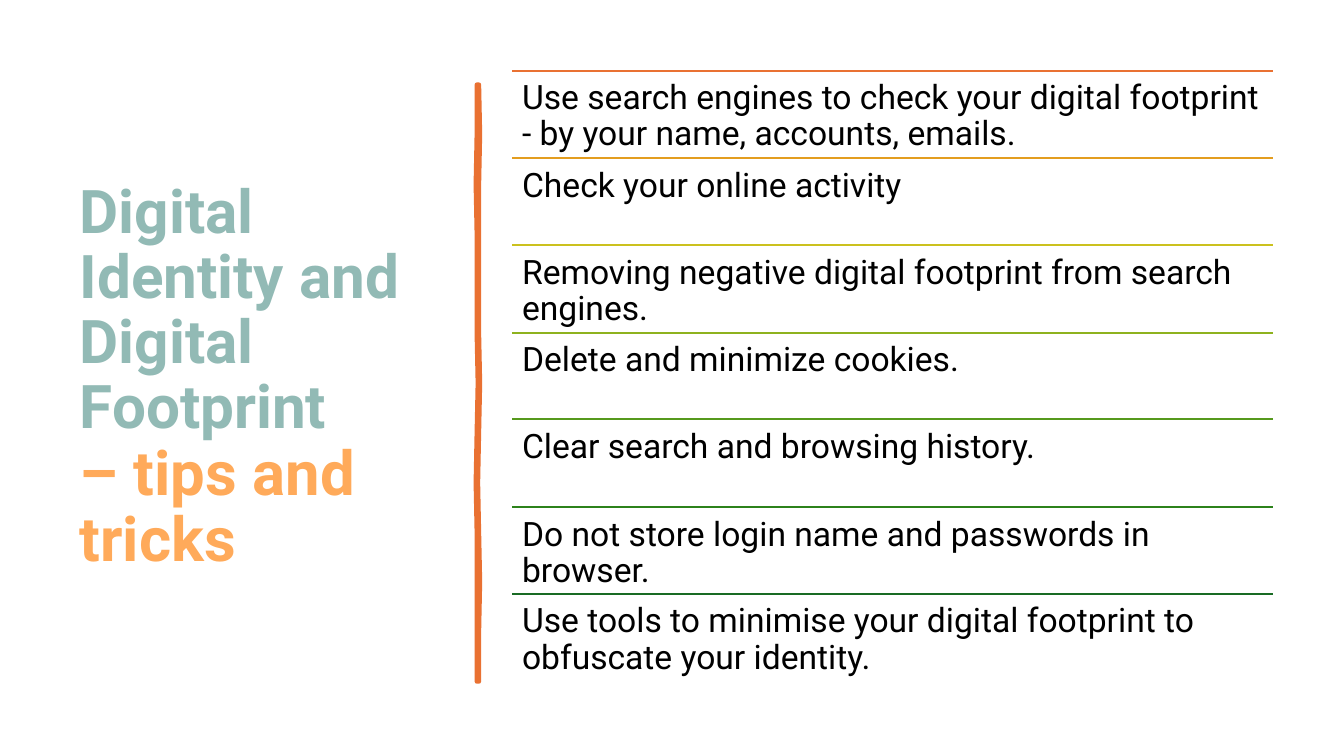
from dataclasses import dataclass

from lxml.etree import SubElement
from pptx import Presentation
from pptx.dml.color import RGBColor as Color
from pptx.enum.shapes import MSO_CONNECTOR as Connector
from pptx.enum.text import MSO_ANCHOR as Anchor, MSO_AUTO_SIZE as AutoSize, PP_ALIGN as Align
from pptx.oxml.ns import qn
from pptx.util import Pt

PX = 9144


@dataclass(frozen=True)
class Theme:
    font: str = "Roboto"
    teal: str = "92BAB5"
    apricot: str = "FFAA5A"
    orange: str = "E97132"
    text: str = "000000"
    title_size: int = 43
    subtitle_size: int = 44
    tip_size: int = 24
    rule_width: float = 1.5
    brush_width: float = 3.25
    line_spacing: float = 0.9


THEME = Theme()

TITLE = "Digital Identity and Digital Footprint \v– tips and tricks"

TIPS = [
    ("Use search engines to check your digital footprint - by your name, accounts, emails.", "E97132"),
    ("Check your online activity", "E39D1F"),
    ("Removing negative digital footprint from search engines.", "CBC11E"),
    ("Delete and minimize cookies.", "8EB21E"),
    ("Clear search and browsing history.", "56991D"),
    ("Do not store login name and passwords in browser.", "2C821B"),
    ("Use tools to minimise your digital footprint to obfuscate your identity.", "196B24"),
]

TIP_LEFT, TIP_TOP, TIP_WIDTH, TIPS_HEIGHT = 508, 70, 755, 606

BRUSH_TOP, BRUSH_BOTTOM = 84, 676
BRUSH_LEFT_EDGE = [473, 473, 472, 473, 473, 473, 474, 473, 472, 473, 473, 473, 473]
BRUSH_RIGHT_EDGE = [475, 476, 475, 475, 475, 475, 476, 475, 474, 475, 476, 475, 475]


def style_run(run, size, color, bold=False):
    run.font.name = THEME.font
    run.font.size = Pt(size)
    run.font.bold = bold
    run.font.color.rgb = Color.from_string(color)


def place(shape, left, top, width, height):
    shape.left, shape.top = left * PX, top * PX
    shape.width, shape.height = width * PX, height * PX


def write_title(slide):
    title = slide.shapes.title
    place(title, 69, 70, 374, 611)
    frame = title.text_frame
    frame.text = TITLE
    frame.word_wrap = True
    frame.auto_size = AutoSize.NONE
    frame.vertical_anchor = Anchor.MIDDLE
    paragraph = frame.paragraphs[0]
    paragraph.alignment = Align.LEFT
    paragraph.line_spacing = THEME.line_spacing
    topic, subtitle = paragraph.runs
    style_run(topic, THEME.title_size, THEME.teal, bold=True)
    style_run(subtitle, THEME.subtitle_size, THEME.apricot, bold=True)


def draw_brush_stroke(slide):
    step = (BRUSH_BOTTOM - BRUSH_TOP) / (len(BRUSH_LEFT_EDGE) - 1)
    left_edge = [(x, BRUSH_TOP + step * i) for i, x in enumerate(BRUSH_LEFT_EDGE)]
    right_edge = [(x, BRUSH_TOP + step * i) for i, x in enumerate(BRUSH_RIGHT_EDGE)]
    outline = right_edge + left_edge[::-1]
    builder = slide.shapes.build_freeform(*outline[0], scale=PX)
    builder.add_line_segments(outline[1:], close=True)
    stroke = builder.convert_to_shape()
    stroke.shadow.inherit = False
    stroke.fill.solid()
    stroke.fill.fore_color.rgb = Color.from_string(THEME.orange)
    stroke.line.color.rgb = Color.from_string(THEME.orange)
    stroke.line.width = Pt(THEME.brush_width)
    SubElement(stroke.line._get_or_add_ln(), qn("a:round"))


def draw_rule(slide, top, color):
    rule = slide.shapes.add_connector(
        Connector.STRAIGHT, TIP_LEFT * PX, top * PX, (TIP_LEFT + TIP_WIDTH) * PX, top * PX
    )
    rule.line.color.rgb = Color.from_string(color)
    rule.line.width = Pt(THEME.rule_width)
    SubElement(rule._element.spPr, qn("a:effectLst"))


def write_tip(slide, top, height, text):
    box = slide.shapes.add_textbox(0, 0, 0, 0)
    place(box, TIP_LEFT, top, TIP_WIDTH, height)
    frame = box.text_frame
    frame.text = text
    frame.word_wrap = True
    frame.margin_left = frame.margin_right = 10 * PX
    frame.margin_top = frame.margin_bottom = 10 * PX
    paragraph = frame.paragraphs[0]
    paragraph.line_spacing = THEME.line_spacing
    style_run(paragraph.runs[0], THEME.tip_size, THEME.text)


def main():
    presentation = Presentation()
    presentation.slide_width, presentation.slide_height = 1333 * PX, 750 * PX
    slide = presentation.slides.add_slide(presentation.slide_layouts[5])
    write_title(slide)
    draw_brush_stroke(slide)
    for index, (text, color) in enumerate(TIPS):
        top = TIP_TOP + round(index * TIPS_HEIGHT / len(TIPS))
        draw_rule(slide, top, color)
        write_tip(slide, top, TIPS_HEIGHT // len(TIPS), text)
    presentation.save("out.pptx")


if __name__ == "__main__":
    main()
